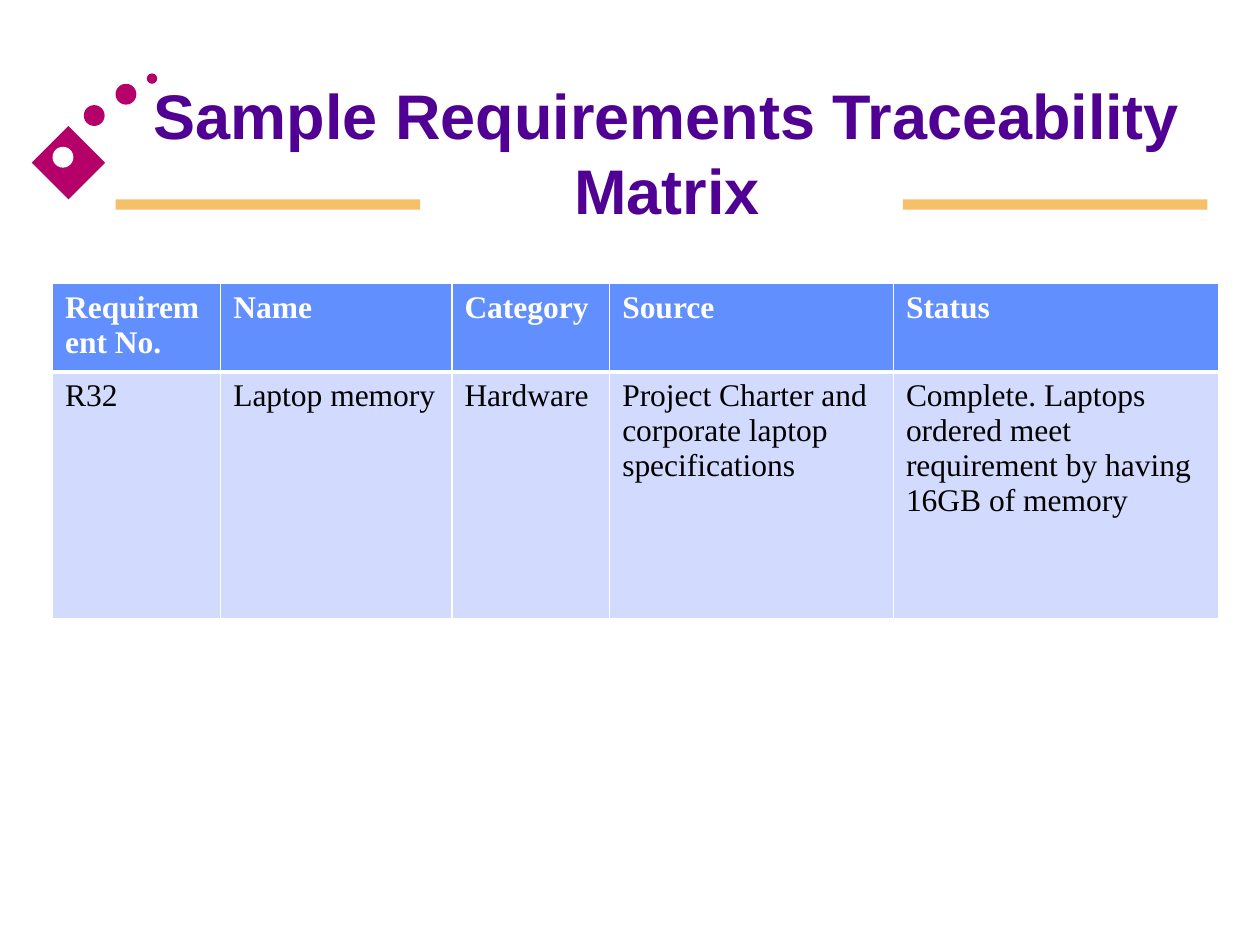
from itertools import accumulate

from lxml.etree import SubElement
from pptx import Presentation
from pptx.dml.color import RGBColor
from pptx.enum.shapes import MSO_SHAPE as Shape
from pptx.enum.text import MSO_ANCHOR as Anchor, PP_ALIGN as Align
from pptx.oxml.ns import qn
from pptx.util import Cm, Pt

GOLD = RGBColor(0xF6, 0xBF, 0x69)
MAGENTA = RGBColor(0xB5, 0x00, 0x69)
PURPLE = RGBColor(0x50, 0x00, 0x93)
BLUE = RGBColor(0x61, 0x8F, 0xFD)
PALE_BLUE = RGBColor(0xD2, 0xDB, 0xFE)
WHITE = RGBColor(0xFF, 0xFF, 0xFF)
BLACK = RGBColor(0x00, 0x00, 0x00)

COLUMN_WIDTHS = (3.39, 4.66, 3.18, 5.72, 6.56)
ROW_HEIGHTS = (1.58, 4.98)
ROWS = (
    ("Requirement No.", "Name", "Category", "Source", "Status"),
    ("R32", "Laptop memory", "Hardware",
     "Project Charter and corporate laptop specifications",
     "Complete. Laptops ordered meet requirement by having 16GB of memory"),
)


def write(tf, text, *, font, size, color, bold=False, align=Align.LEFT, spacing=1.0):
    tf.word_wrap = True
    p = tf.paragraphs[0]
    p.alignment = align
    p.line_spacing = spacing
    r = p.add_run()
    r.text = text
    r.font.name = font
    r.font.size = Pt(size)
    r.font.bold = bold
    r.font.color.rgb = color


def set_borders(cell, **widths):
    """Draw white cell edges; widths in points are keyed by L, R, T and B."""
    tc_pr = cell._tc.get_or_add_tcPr()
    for index, (side, width) in enumerate(widths.items()):
        ln = SubElement(tc_pr, qn(f"a:ln{side}"), w=str(Pt(width)))
        SubElement(SubElement(ln, qn("a:solidFill")), qn("a:srgbClr"), val=str(WHITE))
        tc_pr.insert(index, ln)


class SlideBuilder:
    """Adds styled elements to one slide; lengths are in centimetres."""

    title_font = "Arial"
    body_font = "Times New Roman"

    def __init__(self, s):
        self.s = s

    def shape(self, kind, left, top, width, height, color):
        sp = self.s.shapes.add_shape(kind, Cm(left), Cm(top), Cm(width), Cm(height))
        sp.shadow.inherit = False
        sp.fill.solid()
        sp.fill.fore_color.rgb = color
        sp.line.fill.background()

    def title(self, text, left, top, width, height):
        sp = self.s.shapes.add_textbox(Cm(left), Cm(top), Cm(width), Cm(height))
        tf = sp.text_frame
        tf.vertical_anchor = Anchor.MIDDLE
        write(tf, text, font=self.title_font, size=36, color=PURPLE,
              bold=True, align=Align.CENTER)

    def table(self, rows, left, top, widths, heights):
        frame = self.s.shapes.add_table(
            len(rows), len(widths), Cm(left), Cm(top),
            Cm(sum(widths)), Cm(sum(heights)))
        table = frame.table
        for column, width in zip(table.columns, widths):
            column.width = Cm(width)
        for i, (row, height) in enumerate(zip(rows, heights)):
            table.rows[i].height = Cm(height)
            header = i == 0
            for j, text in enumerate(row):
                cell = table.cell(i, j)
                cell.fill.solid()
                cell.fill.fore_color.rgb = BLUE if header else PALE_BLUE
                set_borders(cell, L=1, R=1, T=1 if header else 3, B=3 if header else 1)
                write(cell.text_frame, text, font=self.body_font, size=18,
                      color=WHITE if header else BLACK, bold=header)


def main():
    prs = Presentation()
    prs.slide_width, prs.slide_height = Cm(25.4), Cm(19.05)
    b = SlideBuilder(prs.slides.add_slide(prs.slide_layouts[6]))

    for left in (2.33, 18.2):
        b.shape(Shape.RECTANGLE, left, 4.02, 6.14, 0.21, GOLD)
    b.shape(Shape.DIAMOND, 0.64, 2.54, 1.48, 1.48, MAGENTA)
    for left, top, size, color in (
        (1.06, 2.96, 0.42, WHITE),
        (1.69, 2.12, 0.42, MAGENTA),
        (2.33, 1.69, 0.42, MAGENTA),
        (2.96, 1.48, 0.21, MAGENTA),
    ):
        b.shape(Shape.OVAL, left, top, size, size, color)

    b.title("Sample Requirements Traceability Matrix", 2.12, 1.69, 22.65, 2.75)
    b.table(ROWS, 1.06, 5.72, COLUMN_WIDTHS, ROW_HEIGHTS)
    prs.save("out.pptx")


if __name__ == "__main__":
    main()
